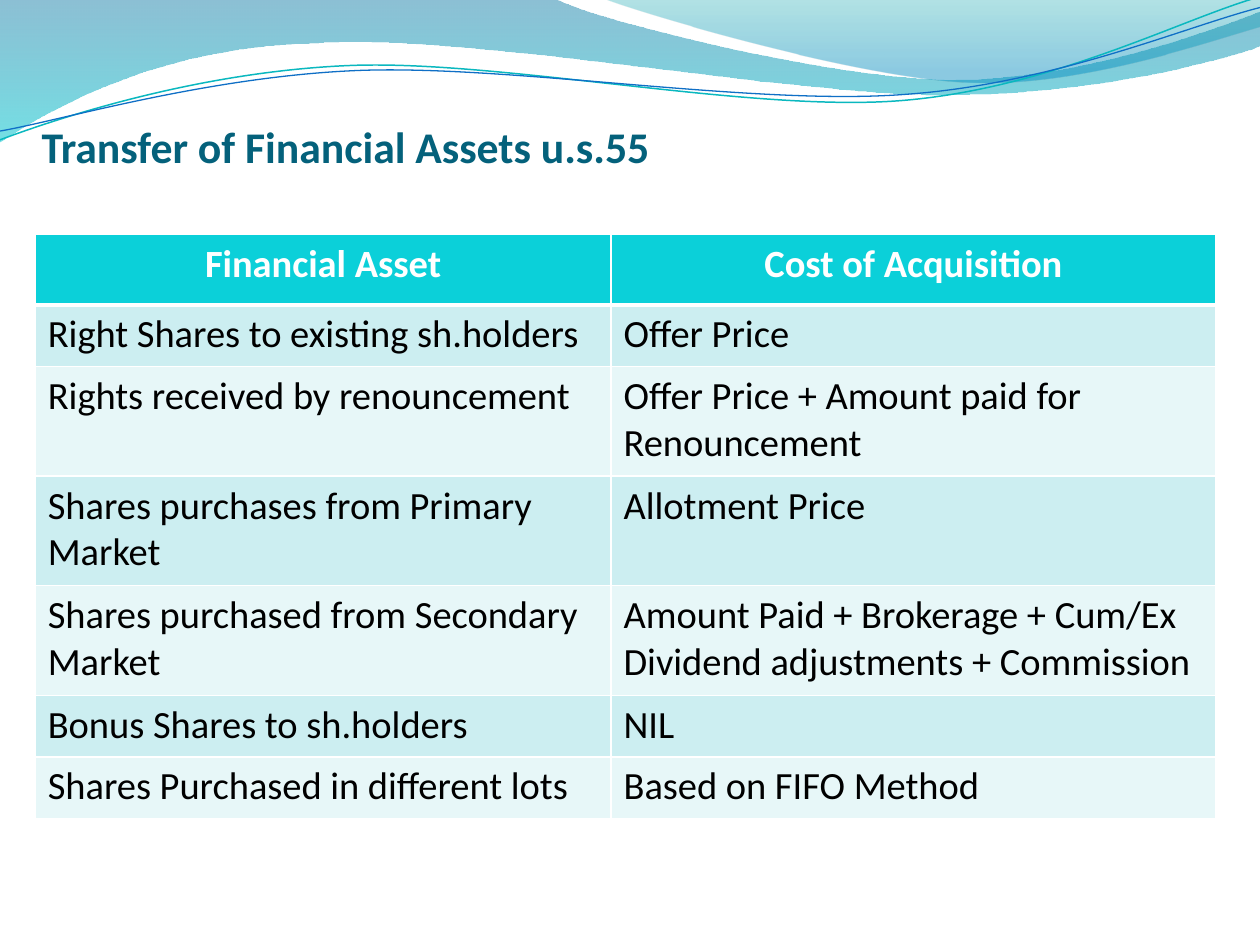
from dataclasses import dataclass
from math import cos, radians, sin
from typing import Optional

from lxml import etree
from pptx import Presentation
from pptx import util as u
from pptx.dml.color import RGBColor
from pptx.enum import text as t
from pptx.oxml.ns import qn

COLS, ROWS = 10, 7.5  # grid of one-inch squares
Point = tuple[float, float]


@dataclass(frozen=True)
class Theme:
    font: str = "Calibri"
    title: str = "04617B"
    head: str = "0BD0D9"
    bands: tuple = ("CCEEF1", "E7F7F8")
    ink: str = "000000"
    white: str = "FFFFFF"
    big: int = 25
    body: int = 22


@dataclass(frozen=True)
class Stop:
    at: float
    color: str
    alpha: int


@dataclass(frozen=True)
class Wave:
    """Start point, then legs of one point (line) or three points (curve)."""
    start: Point
    legs: tuple
    stops: tuple = ()
    line: Optional[tuple[str, float]] = None
    tilt: float = 0


THEME = Theme()
TILT = -2.7
HUB = (4.99, 0.57)  # centre that tilted waves turn about

WAVES = (
    Wave((0, 0), (
        ((4.4, -0.01),),
        ((4.76, 0.17), (6.64, 0.63), (7.58, 0.63)),
        ((8.53, 0.63), (9.58, 0.26), (10, 0.09)),
        ((10.01, 0.36),),
        ((9.83, 0.44), (8.7, 0.76), (7.46, 0.75)),
        ((6.22, 0.75), (3.82, 0.28), (2.57, 0.34)),
        ((1.29, 0.36), (0.46, 0.83), (-0.01, 1.13)),
        ((0, 0),),
    ), stops=(Stop(0, "0074A1", 45), Stop(1, "00C6CF", 55))),
    Wave((4.79, -0.01), (
        ((5.09, 0.11), (6.82, 0.62), (7.69, 0.65)),
        ((8.56, 0.69), (9.61, 0.32), (10, 0.21)),
        ((10, 0),),
        ((4.79, -0.01),),
    ), stops=(Stop(0, "00A1A9", 30), Stop(0.8, "008BBF", 45))),
    Wave((0, 1.11), (
        ((0.48, 0.93), (1.58, 0.57), (2.77, 0.52)),
        ((3.95, 0.47), (5.93, 0.89), (7.13, 0.8)),
        ((8.33, 0.71), (9.38, 0.15), (9.98, -0.02)),
    ), line=("0AB8BF", 0.85), tilt=TILT),
    Wave((0, 1.04), (
        ((0.47, 0.96), (1.64, 0.61), (2.83, 0.56)),
        ((4.03, 0.51), (5.97, 0.84), (7.17, 0.75)),
        ((8.36, 0.67), (9.41, 0.21), (10, 0.06)),
    ), line=("0F6FC6", 0.75), tilt=TILT),
)

HEADS = ("Financial Asset", "Cost of Acquisition")
ASSETS = (
    ("Right Shares to existing sh.holders", "Offer Price"),
    ("Rights received by renouncement", "Offer Price + Amount paid for Renouncement"),
    ("Shares purchases from Primary Market", "Allotment Price"),
    ("Shares purchased from Secondary Market",
     "Amount Paid + Brokerage + Cum/Ex Dividend adjustments + Commission"),
    ("Bonus Shares to sh.holders", "NIL"),
    ("Shares Purchased in different lots", "Based on FIFO Method"),
)
WIDTHS = (4.57, 4.8)
HEAD, ONE, TWO = 0.56, 0.49, 0.87
HEIGHTS = (HEAD, ONE, TWO, TWO, TWO, ONE, ONE)


def rgb(code: str) -> RGBColor:
    return RGBColor.from_string(code)


def level(point: Point, tilt: float) -> Point:
    """Undo a tilt about the hub."""
    a = radians(-tilt)
    x, y = point[0] - HUB[0], point[1] - HUB[1]
    return HUB[0] + x * cos(a) - y * sin(a), HUB[1] + x * sin(a) + y * cos(a)


def bend(shape, legs: tuple) -> None:
    """Join the three lines of each curved leg into one Bezier segment."""
    path = next(shape._element.iter(qn("a:path")))
    lines = iter(path.findall(qn("a:lnTo")))
    for leg in legs:
        group = [next(lines) for _ in leg]
        if len(leg) == 3:
            curve = etree.Element(qn("a:cubicBezTo"))
            group[0].addprevious(curve)
            for line in group:
                curve.append(line[0])
                path.remove(line)


def draw_wave(slide, wave: Wave) -> None:
    knots = [wave.start] + [p for leg in wave.legs for p in leg]
    points = [tuple(map(u.Inches, level(p, wave.tilt))) for p in knots]
    pen = slide.shapes.build_freeform(*points[0])
    pen.add_line_segments(points[1:], close=False)
    shape = pen.convert_to_shape()
    bend(shape, wave.legs)
    shape.rotation = wave.tilt
    shape.shadow.inherit = False
    if wave.stops:
        etree.SubElement(next(shape._element.iter(qn("a:path"))), qn("a:close"))
        shape.fill.gradient()
        shape.fill.gradient_angle = 270
        for slot, stop in zip(shape.fill.gradient_stops, wave.stops):
            slot.position = stop.at
            slot.color.rgb = rgb(stop.color)
        for node, stop in zip(shape._element.iter(qn("a:srgbClr")), wave.stops):
            etree.SubElement(node, qn("a:alpha"), val=str(stop.alpha * 1000))
        shape.line.fill.background()
    else:
        color, width = wave.line
        shape.fill.background()
        shape.line.color.rgb = rgb(color)
        shape.line.width = u.Pt(width)


def write(frame, words: str, *, size: int, color: str, bold: bool = False,
          align=t.PP_ALIGN.LEFT) -> None:
    frame.word_wrap = True
    para = frame.paragraphs[0]
    para.alignment = align
    run = para.add_run()
    run.text = words
    font = run.font
    font.name, font.size, font.bold = THEME.font, u.Pt(size), bold
    font.color.rgb = rgb(color)


def edge(cell, **widths: float) -> None:
    """Draw white cell borders, widths in points by side name."""
    props = cell._tc.get_or_add_tcPr()
    for place, (side, width) in enumerate(widths.items()):
        line = etree.Element(qn(f"a:ln{side}"), w=str(u.Pt(width)))
        fill = etree.SubElement(line, qn("a:solidFill"))
        etree.SubElement(fill, qn("a:srgbClr"), val=THEME.white)
        props.insert(place, line)


def draw_title(slide) -> None:
    box = slide.shapes.add_textbox(*map(u.Inches, (0.28, 0.84, 9.06, 0.63)))
    frame = box.text_frame
    frame.margin_left = frame.margin_right = u.Inches(0.05)
    frame.margin_top = frame.margin_bottom = 0
    frame.vertical_anchor = t.MSO_ANCHOR.MIDDLE
    write(frame, "Transfer of Financial Assets u.s.55",
          size=THEME.big, color=THEME.title, bold=True)


def draw_table(slide) -> None:
    size = (0.28, 1.86, sum(WIDTHS), sum(HEIGHTS))
    table = slide.shapes.add_table(len(HEIGHTS), len(WIDTHS),
                                   *map(u.Inches, size)).table
    for col, width in zip(table.columns, WIDTHS):
        col.width = u.Inches(width)
    for row, height in zip(table.rows, HEIGHTS):
        row.height = u.Inches(height)
    for r, texts in enumerate((HEADS, *ASSETS)):
        top = r == 0
        for c, words in enumerate(texts):
            cell = table.cell(r, c)
            cell.fill.solid()
            cell.fill.fore_color.rgb = rgb(THEME.head if top else THEME.bands[(r - 1) % 2])
            edge(cell, L=1, R=1, T=3 if r == 1 else 1, B=3 if top else 1)
            write(cell.text_frame, words, size=THEME.body, bold=top,
                  color=THEME.white if top else THEME.ink,
                  align=t.PP_ALIGN.CENTER if top else t.PP_ALIGN.LEFT)


def main() -> None:
    deck = Presentation()
    deck.slide_width, deck.slide_height = u.Inches(COLS), u.Inches(ROWS)
    slide = deck.slides.add_slide(deck.slide_layouts[6])
    for wave in WAVES:
        draw_wave(slide, wave)
    draw_title(slide)
    draw_table(slide)
    deck.save("out.pptx")


if __name__ == "__main__":
    main()
